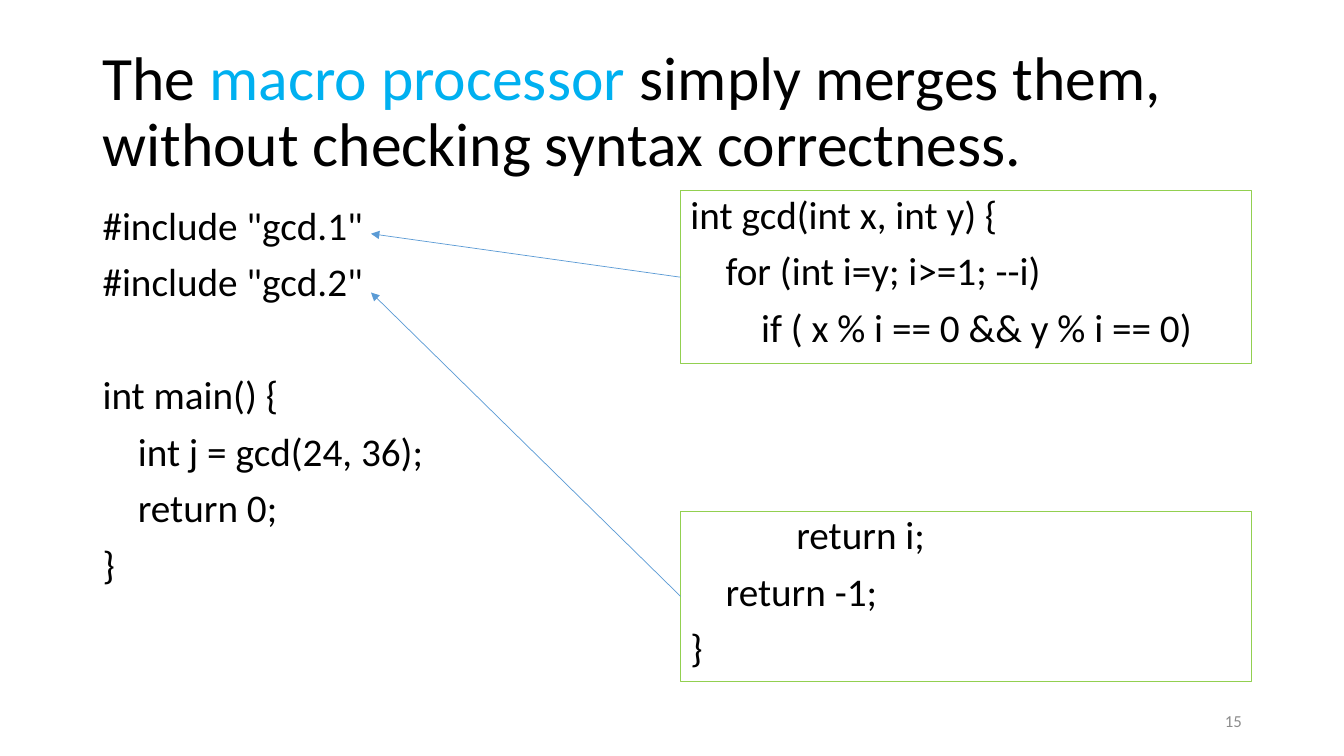
import dataclasses

import lxml.etree
import pptx
import pptx.dml.color
import pptx.enum.shapes
import pptx.enum.text
import pptx.oxml.ns
import pptx.util

Cm = pptx.util.Cm
Pt = pptx.util.Pt
RGB = pptx.dml.color.RGBColor
Align = pptx.enum.text.PP_ALIGN
Anchor = pptx.enum.text.MSO_ANCHOR


@dataclasses.dataclass(frozen=True)
class Theme:
    font: str = "Calibri"
    ink: RGB = RGB(0x00, 0x00, 0x00)
    highlight: RGB = RGB(0x00, 0xB0, 0xF0)
    muted: RGB = RGB(0x8C, 0x8C, 0x8C)
    frame: RGB = RGB(0x92, 0xD0, 0x50)
    arrow: RGB = RGB(0x5B, 0x9B, 0xD5)
    title_size: int = 44
    code_size: int = 28
    number_size: int = 12
    line_spacing: float = 0.9
    code_gap: float = 10
    section_gap: float = 50.5
    code_indent: float = 0.89


class CodeSlide:
    def __init__(self, deck, theme):
        self.theme = theme
        self.slide = deck.slides.add_slide(deck.slide_layouts[1])

    def place(self, holder, left, top, width, height):
        holder.left, holder.top = Cm(left), Cm(top)
        holder.width, holder.height = Cm(width), Cm(height)

    def prepare(self, frame, anchor):
        frame.word_wrap = True
        frame.auto_size = pptx.enum.text.MSO_AUTO_SIZE.NONE
        frame.vertical_anchor = anchor

    def style(self, paragraph, size, color, align=Align.LEFT):
        paragraph.alignment = align
        paragraph.line_spacing = self.theme.line_spacing
        paragraph.font.name = self.theme.font
        paragraph.font.size = Pt(size)
        paragraph.font.color.rgb = color

    def title(self, parts, *area):
        heading = self.slide.shapes.title
        self.place(heading, *area)
        self.prepare(heading.text_frame, Anchor.MIDDLE)
        paragraph = heading.text_frame.paragraphs[0]
        self.style(paragraph, self.theme.title_size, self.theme.ink)
        for wording, highlighted in parts:
            run = paragraph.add_run()
            run.text = wording
            if highlighted:
                run.font.color.rgb = self.theme.highlight

    def code(self, frame, lines, section_starts=()):
        self.prepare(frame, Anchor.TOP)
        for index, (level, wording) in enumerate(lines):
            paragraph = frame.add_paragraph() if index else frame.paragraphs[0]
            paragraph.text = wording
            properties = paragraph._p.get_or_add_pPr()
            properties.set("marL", str(Cm(level * self.theme.code_indent)))
            properties.set("indent", "0")
            lxml.etree.SubElement(properties, pptx.oxml.ns.qn("a:buNone"))
            self.style(paragraph, self.theme.code_size, self.theme.ink)
            starts_section = index in section_starts
            paragraph.space_before = Pt(
                self.theme.section_gap if starts_section else self.theme.code_gap)

    def program(self, lines, section_starts, *area):
        body = self.slide.placeholders[1]
        self.place(body, *area)
        self.code(body.text_frame, lines, section_starts)

    def code_box(self, lines, left, top, width, height):
        box = self.slide.shapes.add_shape(
            pptx.enum.shapes.MSO_SHAPE.RECTANGLE,
            Cm(left), Cm(top), Cm(width), Cm(height))
        box.shadow.inherit = False
        box.fill.background()
        box.line.color.rgb = self.theme.frame
        box.line.width = Pt(0.75)
        self.code(box.text_frame, lines)
        return box

    def arrow(self, box, left, top):
        arrow = self.slide.shapes.add_connector(
            pptx.enum.shapes.MSO_CONNECTOR.STRAIGHT,
            box.left, box.top + box.height // 2, Cm(left), Cm(top))
        arrow.begin_connect(box, 1)
        arrow.line.color.rgb = self.theme.arrow
        arrow.line.width = Pt(0.5)
        qn = pptx.oxml.ns.qn
        lxml.etree.SubElement(arrow.line._get_or_add_ln(), qn("a:tailEnd"), type="triangle")
        lxml.etree.SubElement(arrow._element.spPr, qn("a:effectLst"))

    def page_number(self, number, left, top, width, height):
        label = self.slide.shapes.add_textbox(Cm(left), Cm(top), Cm(width), Cm(height))
        self.prepare(label.text_frame, Anchor.MIDDLE)
        paragraph = label.text_frame.paragraphs[0]
        paragraph.text = number
        self.style(paragraph, self.theme.number_size, self.theme.muted, Align.RIGHT)
        paragraph.line_spacing = 1.0


def main():
    deck = pptx.Presentation()
    deck.slide_width, deck.slide_height = Cm(33.87), Cm(19.05)
    page = CodeSlide(deck, Theme())

    left_margin, column_width, box_left = 2.33, 14.4, 17.15
    page.title([("The ", False), ("macro processor", True),
                (" simply merges them, without checking syntax correctness.", False)],
               left_margin, 1.02, 29.21, 3.68)
    page.program([(0, '#include "gcd.1"'), (0, '#include "gcd.2"'),
                  (0, "int main() {"), (1, "int j = gcd(24, 36);"),
                  (1, "return 0;"), (0, "}")],
                 (2,), left_margin, 5.08, column_width, 12.09)
    page.page_number("15", 23.93, 17.65, 7.62, 1.02)

    second_part = page.code_box([(3, "return i;"), (1, "return -1;"), (0, "}")],
                                box_left, 12.88, column_width, 4.29)
    first_part = page.code_box([(0, "int gcd(int x, int y) {"),
                                (1, "for (int i=y; i>=1; --i)"),
                                (2, "if ( x % i == 0 && y % i == 0)")],
                               box_left, 4.8, column_width, 4.37)

    include_end = 9.35
    page.arrow(second_part, include_end, 7.37)
    page.arrow(first_part, include_end, 5.89)
    deck.save("out.pptx")


if __name__ == "__main__":
    main()
